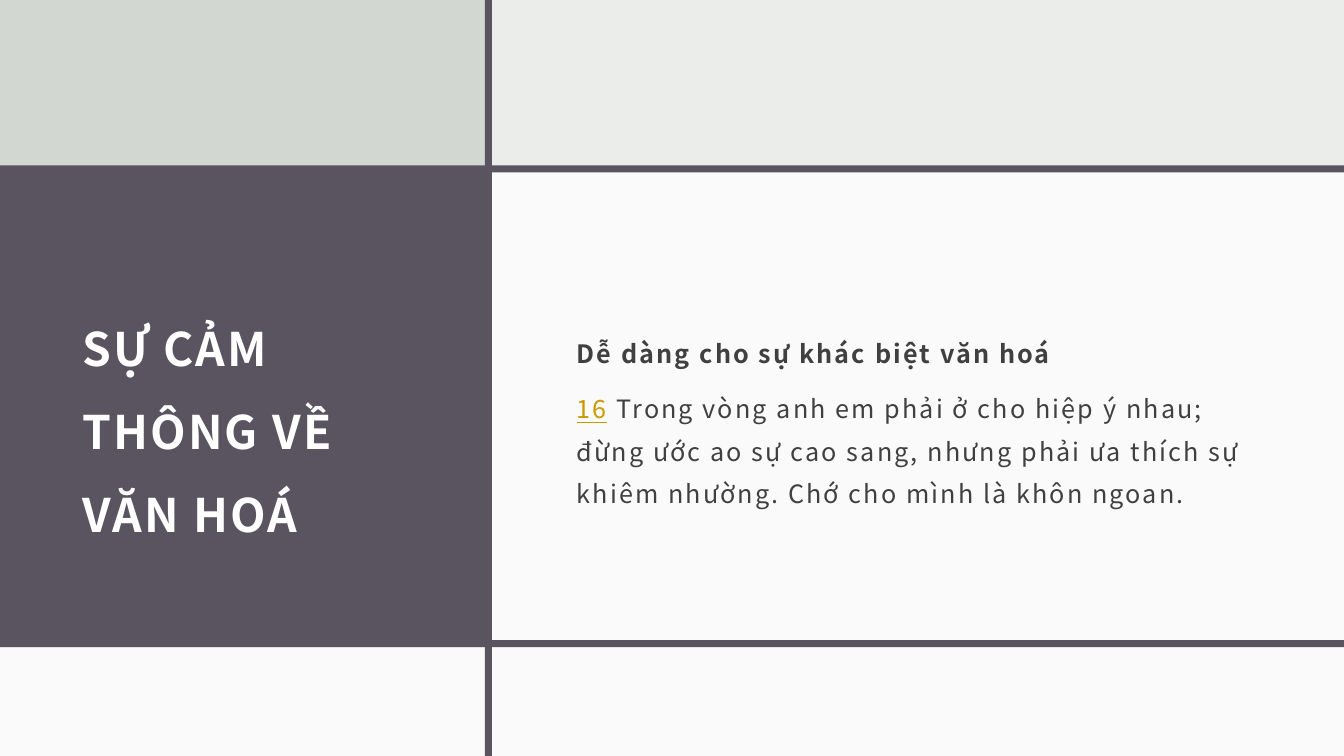
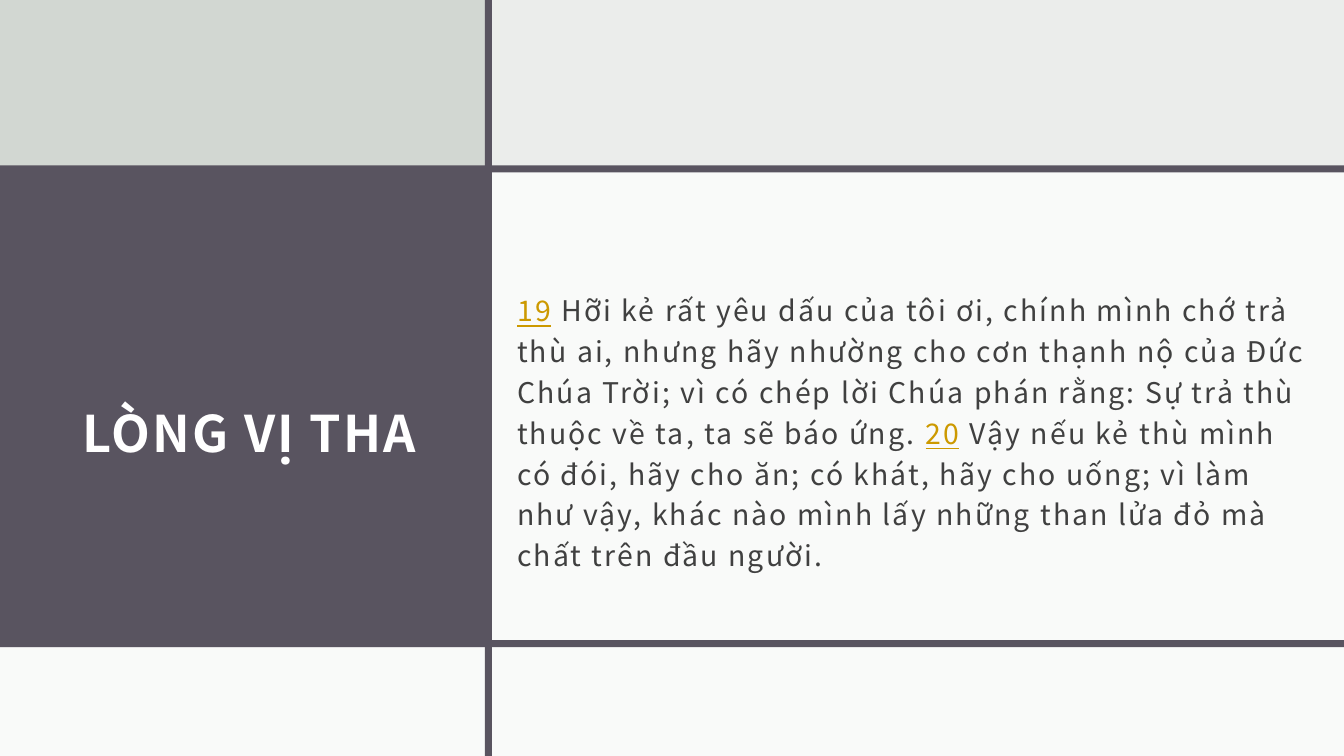
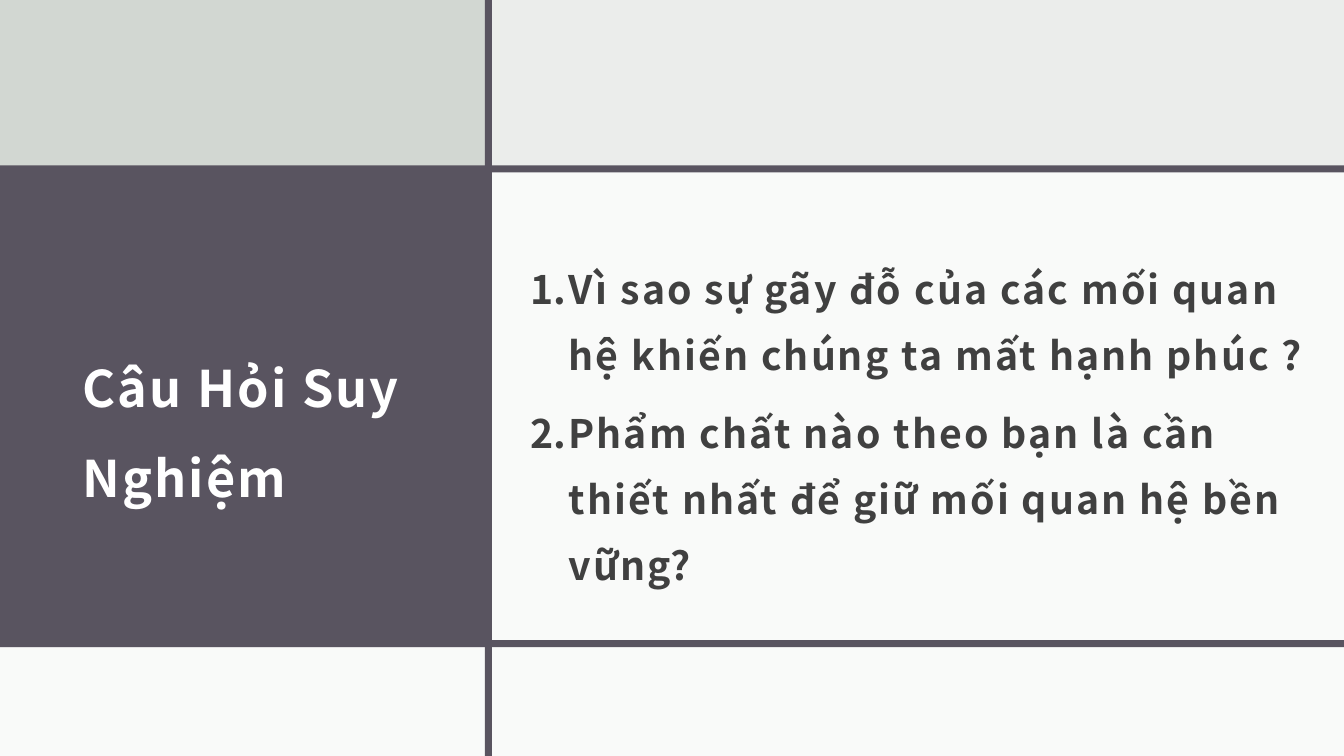
import pptx
import pptx.dml.color
import pptx.enum.shapes
import pptx.enum.text
import pptx.oxml.xmlchemy
import pptx.util
from pptx.util import Inches
from lxml import etree

COLORS = {
    "background": "EBEDEB",
    "plum": "595460",
    "sage": "D2D7D2",
    "white": "FFFFFF",
    "text": "404040",
    "verse": "CC9900",
}
FONT = "Noto Sans CJK JP"
WIDTH, HEIGHT = 13.33, 7.5
SPLIT, BAND = 4.84, 0.07

PANELS = [
    ((0, 1.64, SPLIT, 4.78), "plum", 100),
    ((0, 0, SPLIT, 1.66), "sage", 100),
    ((SPLIT, 1.66, WIDTH - SPLIT, 4.76), "white", 75),
    ((0, 1.64, WIDTH, BAND), "plum", 100),
    ((0, 6.41, WIDTH, 1.09), "white", 75),
    ((0, 6.35, WIDTH, BAND), "plum", 100),
    ((4.81, 0, BAND, HEIGHT), "plum", 100),
]
TITLE_BOX = (0.7, 2.14, 3.73, 3.98)
PLAIN = {"bold": False, "underline": False}
BOLD = {"bold": True, "underline": False}
VERSE = {"bold": False, "underline": True}

SLIDES = [
    {
        "title": "SỰ CẢM THÔNG VỀ VĂN HOÁ",
        "title_size": 33,
        "box": (5.6, 2.14, 7.03, 3.98),
        "size": 18,
        "line_spacing": 1.4,
        "numbered": False,
        "paragraphs": [
            [("Dễ dàng cho sự khác biệt văn hoá", "text", BOLD)],
            [
                ("16", "verse", VERSE),
                (" Trong vòng anh em phải ở cho hiệp ý nhau; đừng ước ao sự cao sang, "
                 "nhưng phải ưa thích sự khiêm nhường. Chớ cho mình là khôn ngoan.",
                 "text", PLAIN),
            ],
        ],
    },
    {
        "title": "LÒNG VỊ THA",
        "title_size": 36,
        "box": (5.01, 2.17, 8.19, 4.16),
        "size": 20.3,
        "line_spacing": 1.2,
        "numbered": False,
        "paragraphs": [
            [
                ("19", "verse", VERSE),
                (" Hỡi kẻ rất yêu dấu của tôi ơi, chính mình chớ trả thù ai, nhưng hãy "
                 "nhường cho cơn thạnh nộ của Đức Chúa Trời; vì có chép lời Chúa phán "
                 "rằng: Sự trả thù thuộc về ta, ta sẽ báo ứng. ", "text", PLAIN),
                ("20", "verse", VERSE),
                (" Vậy nếu kẻ thù mình có đói, hãy cho ăn; có khát, hãy cho uống; vì làm "
                 "như vậy, khác nào mình lấy những than lửa đỏ mà chất trên đầu người.",
                 "text", PLAIN),
            ],
        ],
    },
    {
        "title": "Câu Hỏi Suy Nghiệm",
        "title_size": 36,
        "box": (5.14, 2.14, 8.04, 3.98),
        "size": 28,
        "line_spacing": 1.4,
        "numbered": True,
        "paragraphs": [
            [("Vì sao sự gãy đỗ của các mối quan hệ khiến chúng ta mất hạnh phúc ?",
              "text", BOLD)],
            [("Phẩm chất nào theo bạn là cần thiết nhất để giữ mối quan hệ bền vững?",
              "text", BOLD)],
        ],
    },
]


def rgb(color):
    return pptx.dml.color.RGBColor.from_string(COLORS[color])


def add_text(slide, box, paragraphs, size, line_spacing, space_before, numbered=False):
    frame = slide.shapes.add_textbox(*map(Inches, box)).text_frame
    frame_format = {
        "word_wrap": True,
        "vertical_anchor": pptx.enum.text.MSO_ANCHOR.MIDDLE,
        "margin_left": Inches(0.12),
        "margin_top": Inches(0.12),
        "margin_right": Inches(0.12),
        "margin_bottom": Inches(0.1),
    }
    for key, value in frame_format.items():
        setattr(frame, key, value)
    for index, pieces in enumerate(paragraphs):
        paragraph = frame.add_paragraph() if index else frame.paragraphs[0]
        paragraph.line_spacing = line_spacing
        paragraph.space_before = pptx.util.Pt(space_before)
        if numbered:
            properties = paragraph._p.get_or_add_pPr()
            properties.set("marL", str(Inches(0.38)))
            properties.set("indent", str(-Inches(0.38)))
            numbering = etree.SubElement(properties, pptx.oxml.ns.qn("a:buAutoNum"))
            numbering.set("type", "arabicPeriod")
        for words, color, style in pieces:
            run = paragraph.add_run()
            run.text = words
            run_format = {"name": FONT, "size": pptx.util.Pt(size), **style}
            for key, value in run_format.items():
                setattr(run.font, key, value)
            run.font.color.rgb = rgb(color)
            run._r.get_or_add_rPr().set("spc", "150")


deck = pptx.Presentation()
deck.slide_width = Inches(WIDTH)
deck.slide_height = Inches(HEIGHT)

for content in SLIDES:
    slide = deck.slides.add_slide(deck.slide_layouts[6])
    slide.background.fill.solid()
    slide.background.fill.fore_color.rgb = rgb("background")

    for place, color, opacity in PANELS:
        panel = slide.shapes.add_shape(
            pptx.enum.shapes.MSO_SHAPE.RECTANGLE, *map(Inches, place))
        panel.shadow.inherit = False
        panel.line.fill.background()
        panel.fill.solid()
        panel.fill.fore_color.rgb = rgb(color)
        if opacity < 100:
            tint = panel._element.spPr.find(".//" + pptx.oxml.ns.qn("a:srgbClr"))
            alpha = etree.SubElement(tint, pptx.oxml.ns.qn("a:alpha"))
            alpha.set("val", str(opacity * 1000))

    add_text(slide, TITLE_BOX, [[(content["title"], "white", BOLD)]],
             content["title_size"], 1.5, 0)
    add_text(slide, content["box"], content["paragraphs"], content["size"],
             content["line_spacing"], 9.3, content["numbered"])

deck.save("out.pptx")
